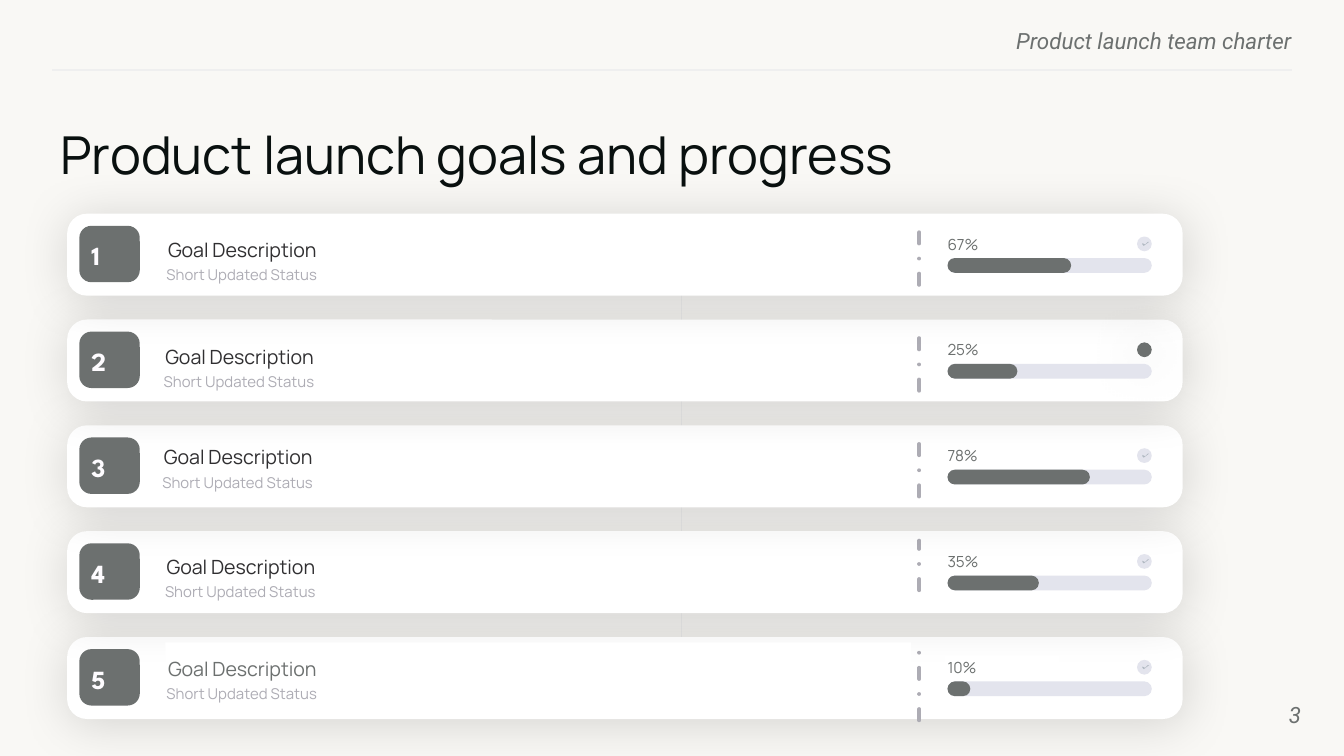
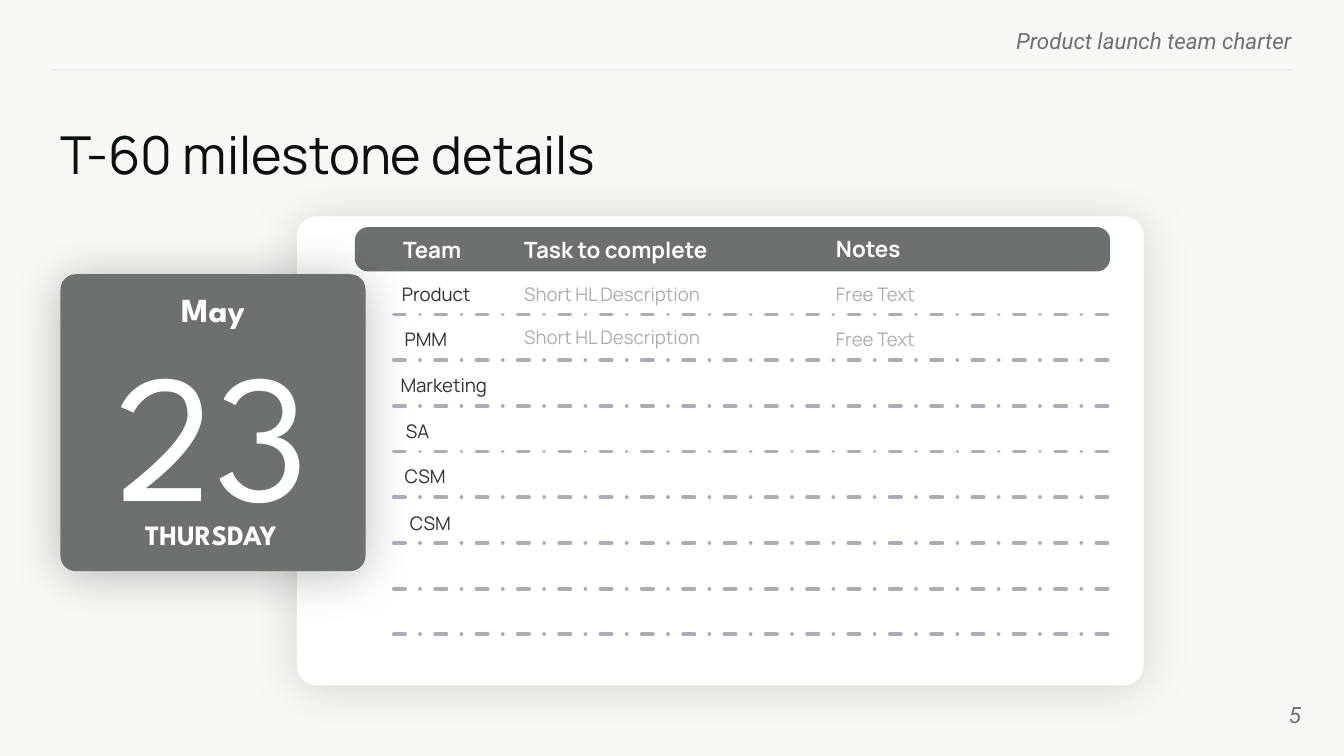
"""Builds two slides of a product launch team charter."""
import dataclasses

import lxml.etree
import pptx
import pptx.dml.color
import pptx.enum.dml
import pptx.enum.shapes
import pptx.enum.text
import pptx.oxml.ns
import pptx.util

WIDTH = 10
HEIGHT = WIDTH * 9 / 16
CHARTER = "Product launch team charter"

GOALS_TITLE = "Product launch goals and progress"
GOAL, STATUS = "Goal Description", "Short Updated Status"
GOALS = [
    dict(percent="67%", bar=0.92, text=(1.23, 0.07), divider=(0.08, 0.53)),
    dict(percent="25%", bar=0.52, text=(1.21, 0.08), divider=(0.08, 0.53), current=True),
    dict(percent="78%", bar=1.06, text=(1.2, 0.04), divider=(0.07, 0.53)),
    dict(percent="35%", bar=0.68, text=(1.22, 0.07), divider=(0.07, 0.44)),
    dict(percent="10%", bar=0.17, text=(1.23, 0.04), divider=(0.09, 0.62), muted=True),
]
CHECK = [(0.01, 0.03), (0, 0.02), (0, 0.01), (0.02, 0.02), (0.04, 0), (0.05, 0)]

MILESTONE_TITLE = "T-60 milestone details"
HEADINGS = [("Team", 2.98, 1.73, 0.69), ("Task to complete", 3.88, 1.73, 1.73),
            ("Notes", 6.2, 1.72, 1.62)]
TASK, NOTE = "Short HL Description", "Free Text"
TEAMS = [("Product", 2.97, 0), ("PMM", 2.99, 0), ("Marketing", 2.96, 0),
         ("SA", 3, 0), ("CSM", 2.99, 0), ("CSM", 3.03, 0.01)]
TASK_DROPS = [0, -0.02]
RULE_COUNT = 8
DATE = [("23", (0.45, 2.36, 2.27, 1.6), "day", False),
        ("THURSDAY", (0.5, 3.83, 2.14, 0.24), "weekday", True),
        ("May", (0.5, 2.13, 2.17, 0.29), "month", True)]


@dataclasses.dataclass(frozen=True)
class Theme:
    """Colours, fonts and type sizes."""
    page: str = "F9F8F5"
    white: str = "FFFFFF"
    badge_text: str = "FEFCFF"
    slate: str = "6C706F"
    ink: str = "09100F"
    body: str = "302F31"
    pale: str = "ADACB4"
    track: str = "E3E4ED"
    check: str = "B1B9C2"
    hairline: str = "EFEFEF"
    sans: str = "Manrope"
    display: str = "League Spartan"
    running: str = "Roboto"
    title: float = 28
    header: float = 12
    badge: float = 14
    goal: float = 10.5
    status: float = 8
    percent: float = 8.2
    cell: float = 10
    day: float = 97.5
    weekday: float = 15
    month: float = 18


THEME = Theme()
SHAPES = pptx.enum.shapes.MSO_SHAPE
ALIGN = pptx.enum.text.PP_ALIGN
ANCHOR = pptx.enum.text.MSO_ANCHOR
INSET = (0.02, 0.02)


def colour(value):
    return pptx.dml.color.RGBColor.from_string(value)


def inches(values):
    return [pptx.util.Inches(value) for value in values]


def paint(shape, fill):
    shape.shadow.inherit = False
    shape.fill.solid()
    shape.fill.fore_color.rgb = colour(fill)
    shape.line.fill.background()


def add_shadow(shape, opacity):
    qn = pptx.oxml.ns.qn
    effects = shape.element.spPr.find(qn("a:effectLst"))
    outer = lxml.etree.SubElement(
        effects, qn("a:outerShdw"), blurRad=str(pptx.util.Pt(27)),
        dist=str(pptx.util.Pt(2)), dir="5400000", algn="t", rotWithShape="0")
    tint = lxml.etree.SubElement(outer, qn("a:srgbClr"), val="000000")
    lxml.etree.SubElement(tint, qn("a:alpha"), val=str(opacity * 1000))


def add_block(slide, place, fill, kind=SHAPES.RECTANGLE, corner=None, shadow=None):
    shape = slide.shapes.add_shape(kind, *inches(place))
    paint(shape, fill)
    if corner is not None:
        shape.adjustments[0] = corner
    if shadow:
        add_shadow(shape, shadow)
    return shape


def add_round(slide, place, fill, corner, shadow=None):
    return add_block(slide, place, fill, SHAPES.ROUNDED_RECTANGLE, corner, shadow)


def add_text(slide, text, place, size, ink, font=THEME.sans, bold=False, italic=False,
             align=ALIGN.LEFT, anchor=ANCHOR.MIDDLE, inset=INSET, spacing=None, fill=None):
    box = slide.shapes.add_textbox(*inches(place))
    if fill:
        box.fill.solid()
        box.fill.fore_color.rgb = colour(fill)
    frame = box.text_frame
    frame.word_wrap = True
    frame.vertical_anchor = anchor
    frame.margin_left = frame.margin_right = pptx.util.Inches(inset[0])
    frame.margin_top = frame.margin_bottom = pptx.util.Inches(inset[1])
    frame.text = text
    para = frame.paragraphs[0]
    para.alignment = align
    if spacing:
        para.line_spacing = spacing
    span = para.runs[0].font
    span.name, span.size = font, pptx.util.Pt(size)
    span.bold, span.italic = bold, italic
    span.color.rgb = colour(ink)


def add_line(slide, start, end, ink, weight=0.75, dashed=False):
    qn = pptx.oxml.ns.qn
    line = slide.shapes.add_connector(
        pptx.enum.shapes.MSO_CONNECTOR.STRAIGHT, *inches(start + end))
    line.line.color.rgb = colour(ink)
    line.line.width = pptx.util.Pt(weight)
    if dashed:
        line.line.dash_style = pptx.enum.dml.MSO_LINE.DASH_DOT
        line.element.spPr.find(qn("a:ln")).set("cap", "rnd")
    lxml.etree.SubElement(line.element.spPr, qn("a:effectLst"))


def add_dashes(slide, start, end):
    add_line(slide, start, end, THEME.pale, 2, dashed=True)


def add_page(deck, title, number):
    slide = deck.slides.add_slide(deck.slide_layouts[6])
    slide.background.fill.solid()
    slide.background.fill.fore_color.rgb = colour(THEME.page)
    running = dict(size=THEME.header, ink=THEME.slate, font=THEME.running,
                   italic=True, align=ALIGN.RIGHT, inset=(0, 0))
    add_line(slide, (9.61, 0.52), (0.39, 0.52), THEME.hairline)
    add_text(slide, CHARTER, (5.76, 0.2, 3.85, 0.18), anchor=ANCHOR.TOP, **running)
    add_text(slide, title, (0.45, 0.91, 9.23, 0.51), THEME.title, THEME.ink,
             anchor=ANCHOR.TOP, inset=(0, 0))
    add_text(slide, number, (9.08, 5.1, 0.6, 0.43), **running)
    return slide


def add_check(slide, left, top, fill):
    points = [inches((left + x, top + y)) for x, y in CHECK]
    builder = slide.shapes.build_freeform(*points[0])
    builder.add_line_segments(points[1:], close=True)
    paint(builder.convert_to_shape(), fill)


def add_goal(slide, number, top, goal):
    current, muted = goal.get("current"), goal.get("muted")
    cover = THEME.white if muted else None
    left, drop = goal["text"]
    add_round(slide, (0.59, top + 0.09, 0.45, 0.42), THEME.slate, 0.215)
    add_text(slide, str(number), (0.66, top + 0.18, 0.32, 0.26), THEME.badge,
             THEME.badge_text, THEME.display, bold=True)
    add_block(slide, (8.46, top + 0.17, 0.11, 0.11), THEME.slate if current else THEME.track,
              SHAPES.OVAL, shadow=25 if current else None)
    add_check(slide, 8.5, top + 0.21, THEME.slate if current else THEME.check)
    add_text(slide, goal["percent"], (7.03, top + 0.14, 0.85, 0.17), THEME.percent,
             THEME.slate, fill=cover)
    for length, fill in ((1.52, THEME.track), (goal["bar"], THEME.slate)):
        add_round(slide, (7.05, top + 0.33, length, 0.11), fill, 0.5)
    add_text(slide, GOAL, (left, top + drop, 5.55, 0.26), THEME.goal,
             THEME.slate if muted else THEME.body, anchor=ANCHOR.TOP, spacing=1.5, fill=cover)
    add_text(slide, STATUS, (left - 0.09, top + drop + 0.2, 5.67, 0.26), THEME.status,
             THEME.pale, anchor=ANCHOR.TOP, inset=(0.1, 0.05), spacing=1.5)


def build_goals(deck):
    slide = add_page(deck, GOALS_TITLE, "3")
    add_line(slide, (5.07, 2.05), (5.07, 4.91), THEME.hairline)
    pitch = HEIGHT * 0.14
    rows = [(index + 1, 1.59 + index * pitch, goal) for index, goal in enumerate(GOALS)]
    for number, top, goal in reversed(rows):
        add_round(slide, (0.5, top, 8.3, 0.61), THEME.white, 0.242, shadow=15)
        begin, end = goal["divider"]
        add_dashes(slide, (6.84, top + end), (6.84, top + begin))
    for row in rows:
        add_goal(slide, *row)


def build_milestone(deck):
    slide = add_page(deck, MILESTONE_TITLE, "5")
    pitch = 0.34
    add_round(slide, (2.21, 1.61, 6.3, 3.49), THEME.white, 0.042, shadow=15)
    add_round(slide, (2.64, 1.69, 5.62, 0.33), THEME.slate, 0.303)
    add_round(slide, (0.45, 2.04, 2.27, 2.21), THEME.slate, 0.052, shadow=25)
    for index in range(RULE_COUNT):
        level = 2.34 + index * pitch
        add_dashes(slide, (2.93, level), (8.25, level))
    for text, left, top, width in HEADINGS:
        add_text(slide, text, (left, top, width, 0.26), THEME.header, THEME.white, bold=True)
    for index, (team, left, drop) in enumerate(TEAMS):
        top = 2.1 + index * pitch
        add_text(slide, team, (left, top + drop, 0.91, 0.17), THEME.cell, THEME.body)
    for index, drop in enumerate(TASK_DROPS):
        top = 2.1 + index * pitch
        add_text(slide, TASK, (3.88, top + drop, 2.14, 0.17), THEME.cell, THEME.pale)
        add_text(slide, NOTE, (6.2, top, 2, 0.17), THEME.cell, THEME.pale)
    for text, place, size, bold in DATE:
        add_text(slide, text, place, getattr(THEME, size), THEME.white, THEME.display,
                 bold=bold, align=ALIGN.CENTER, anchor=ANCHOR.TOP)


def main():
    deck = pptx.Presentation()
    deck.slide_width, deck.slide_height = inches((WIDTH, HEIGHT))
    build_goals(deck)
    build_milestone(deck)
    deck.save("out.pptx")


if __name__ == "__main__":
    main()
